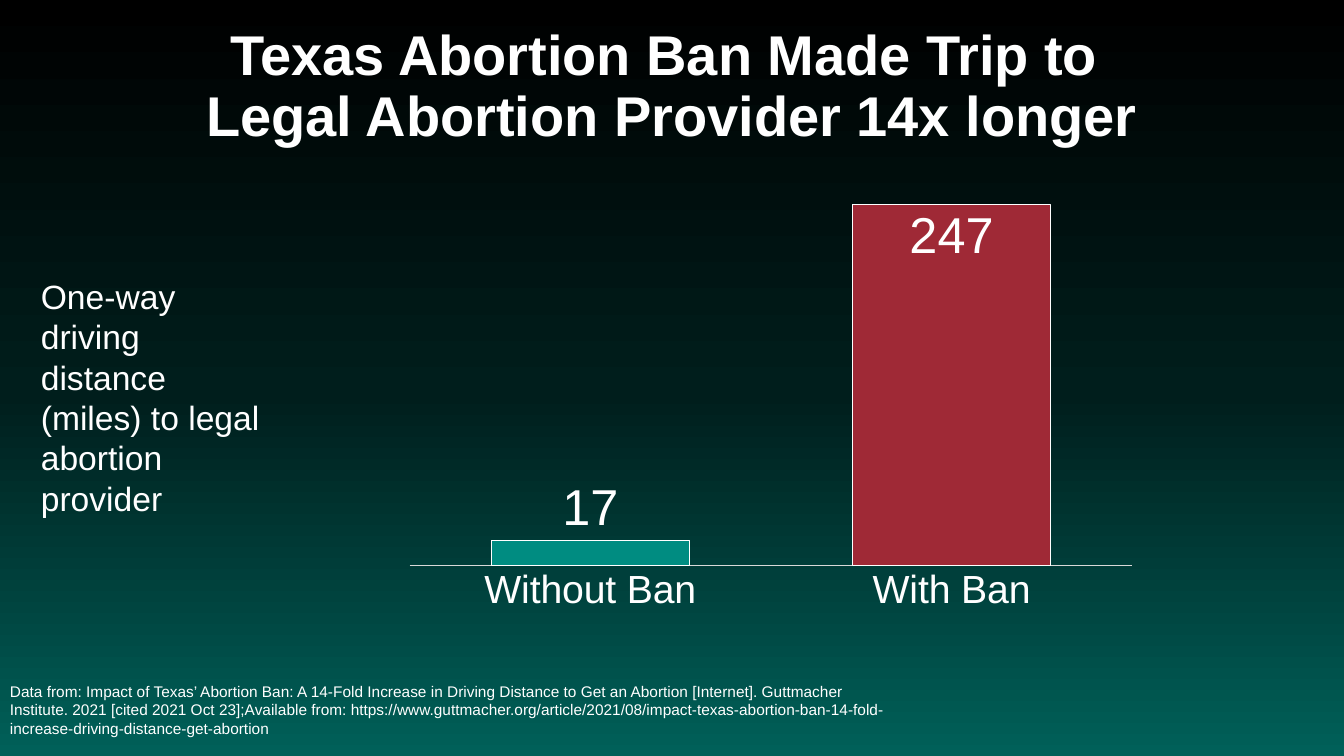
from lxml import etree
from pptx import Presentation
from pptx import util as u
from pptx.chart import data as chart_data
from pptx.dml.color import RGBColor
from pptx.enum import chart as ch, text
from pptx.oxml import ns

PX = 12192000 / 1344
WHITE, TEAL, RED = "FFFFFF", "008C81", "9F2936"


def paint(color_format, hex_code):
    color_format.rgb = RGBColor.from_string(hex_code)


def style(font, size, bold=False):
    font.name, font.size, font.bold = "Arial", u.Pt(size), bold
    paint(font.color, WHITE)


prs = Presentation()
prs.slide_width, prs.slide_height = u.Emu(12192000), u.Emu(6858000)
slide = prs.slides.add_slide(prs.slide_layouts[6])

# Background: black fading down to teal
backdrop = slide.background.fill
backdrop.gradient()
backdrop.gradient_angle = 270
stops = slide.background._cSld.find(".//" + ns.qn("a:gsLst"))
for old_stop in list(stops):
    stops.remove(old_stop)
for percent, hex_code in ((0, "000000"), (52, "001E1C"), (100, "006059")):
    stop = etree.SubElement(stops, ns.qn("a:gs"), pos=str(percent * 1000))
    etree.SubElement(stop, ns.qn("a:srgbClr"), val=hex_code)

# Distance chart
distances = chart_data.CategoryChartData()
distances.categories = ["Without Ban", "With Ban"]
distances.add_series("Series 1", (17, 247))
chart = slide.shapes.add_chart(
    ch.XL_CHART_TYPE.COLUMN_CLUSTERED,
    *(u.Emu(round(n * PX)) for n in (325, 202, 892, 442)), distances).chart
chart.has_legend = chart.has_title = False
style(chart.font, 28)

ban_axis = chart.category_axis
ban_axis.major_tick_mark = ch.XL_TICK_MARK.NONE
style(ban_axis.tick_labels.font, 28)
ban_axis.format.line.width = u.Pt(0.75)
paint(ban_axis.format.line.color, "D9D9D9")
miles_axis = chart.value_axis
miles_axis.visible = miles_axis.has_major_gridlines = False
miles_axis.minimum_scale, miles_axis.maximum_scale = 0, 249

columns = chart.plots[0]
columns.gap_width, columns.overlap, columns.vary_by_categories = 82, -27, False
miles = columns.series[0]
for bar, hex_code in ((miles, TEAL), (miles.points[1], RED)):
    bar.format.fill.solid()
    paint(bar.format.fill.fore_color, hex_code)
    bar.format.line.width = u.Pt(0.75)
    paint(bar.format.line.color, WHITE)

miles.data_labels.show_value = True
ban_label = miles.points[1].data_label
for label, place in ((miles.data_labels, ch.XL_LABEL_POSITION.OUTSIDE_END),
                     (ban_label, ch.XL_LABEL_POSITION.INSIDE_END)):
    style(label.font, 36)
    label.position = place

# Fixed inner plot area
plot_area = chart._chartSpace.chart.plotArea
for old_layout in plot_area.findall(ns.qn("c:layout")):
    plot_area.remove(old_layout)
layout = etree.Element(ns.qn("c:layout"))
manual = etree.SubElement(layout, ns.qn("c:manualLayout"))
for tag, setting in (("layoutTarget", "inner"), ("xMode", "edge"), ("yMode", "edge"),
                     ("x", "0.095"), ("y", "0"), ("w", "0.81"), ("h", "0.822")):
    etree.SubElement(manual, ns.qn("c:" + tag), val=setting)
plot_area.insert(0, layout)

# Title, source note and chart caption
MIDDLE, TOP = text.MSO_ANCHOR.MIDDLE, text.MSO_ANCHOR.TOP
LEFT, CENTER = text.PP_ALIGN.LEFT, text.PP_ALIGN.CENTER
title = ("Texas Abortion Ban Made Trip to ", "Legal Abortion Provider 14x longer")
source = ("Data from: Impact of Texas’ Abortion Ban: A 14-Fold Increase in Driving "
          "Distance to Get an Abortion [Internet]. Guttmacher Institute. 2021 "
          "[cited 2021 Oct 23];Available from: https://www.guttmacher.org/article/"
          "2021/08/impact-texas-abortion-ban-14-fold-increase-driving-distance-get-abortion",)
caption = ("One-way driving distance (miles) to legal abortion provider",)
for lines, box, size, bold, anchor, align, spacing in (
        (title, (92, 16, 1159, 144), 40, True, MIDDLE, CENTER, 0.9),
        (source, (0, 663, 907, 93), 11, False, MIDDLE, LEFT, None),
        (caption, (31, 271, 247, 254), 24, False, TOP, LEFT, None)):
    frame = slide.shapes.add_textbox(*(u.Emu(round(n * PX)) for n in box)).text_frame
    frame.word_wrap, frame.vertical_anchor = True, anchor
    paragraph = frame.paragraphs[0]
    paragraph.alignment, paragraph.line_spacing = align, spacing
    for number, line in enumerate(lines):
        if number:
            paragraph.add_line_break()
        run = paragraph.add_run()
        run.text = line
        style(run.font, size, bold)

prs.save("out.pptx")
